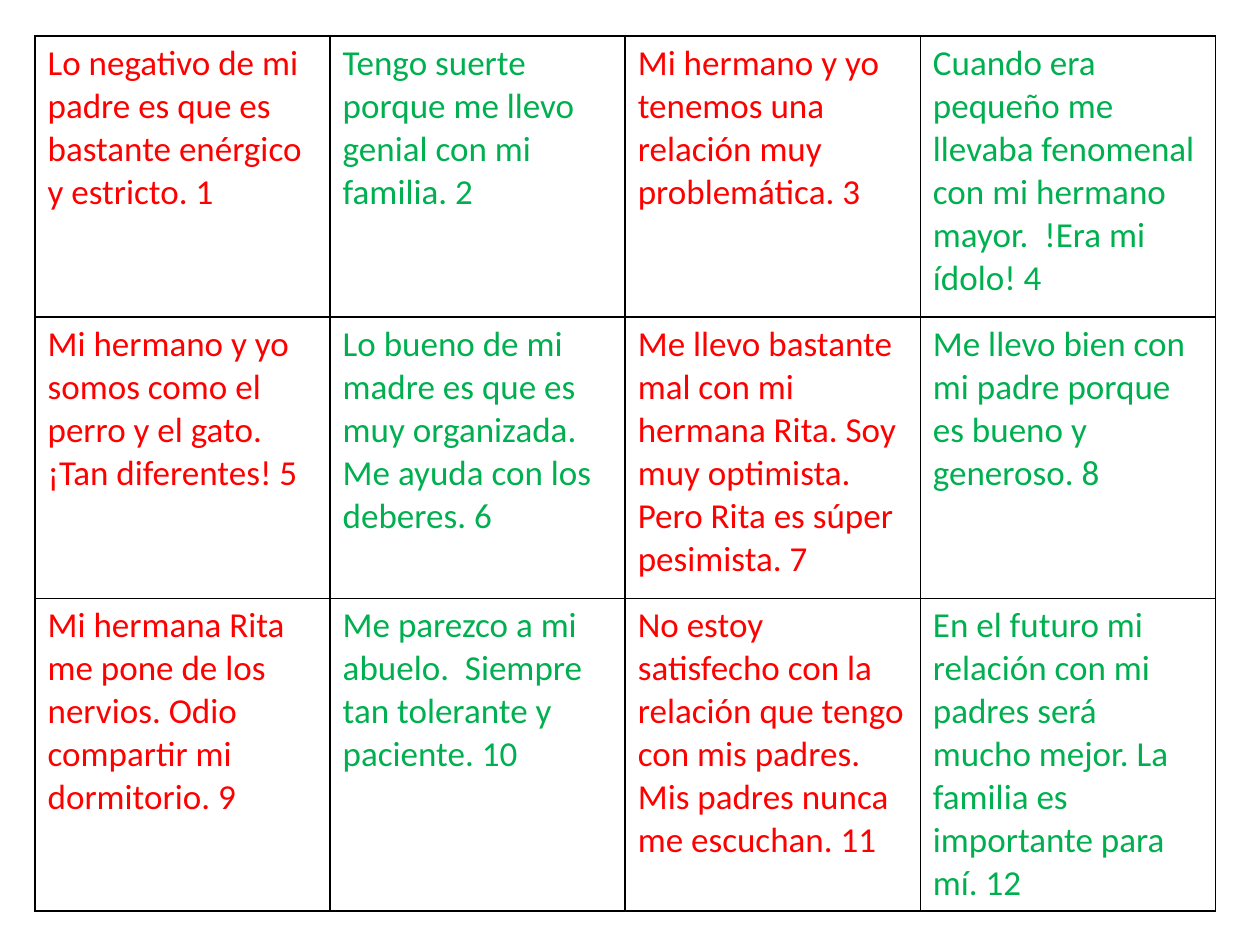
from lxml.etree import SubElement
from pptx import Presentation
from pptx.dml.color import RGBColor
from pptx.oxml.ns import qn
from pptx.util import Pt

# Content: one list per table row; negative and positive cards alternate
CARDS = [
    [
        "Lo negativo de mi padre es que es bastante enérgico y estricto. 1",
        "Tengo suerte porque me llevo genial con mi familia. 2",
        "Mi hermano y yo tenemos una relación muy problemática. 3",
        "Cuando era pequeño me llevaba fenomenal con mi hermano mayor.  !Era mi ídolo! 4",
    ],
    [
        "Mi hermano y yo somos como el perro y el gato. ¡Tan diferentes! 5",
        "Lo bueno de mi madre es que es muy organizada. Me ayuda con los deberes. 6",
        "Me llevo bastante mal con mi hermana Rita. Soy muy optimista. Pero Rita es súper pesimista. 7",
        "Me llevo bien con mi padre porque es bueno y generoso. 8",
    ],
    [
        "Mi hermana Rita me pone de los nervios. Odio compartir mi dormitorio. 9",
        "Me parezco a mi abuelo.  Siempre tan tolerante y paciente. 10",
        "No estoy satisfecho con la relación que tengo con mis padres. Mis padres nunca me escuchan. 11",
        "En el futuro mi relación con mi padres será mucho mejor. La familia es importante para mí. 12",
    ],
]

THEME = {
    "font": {"name": "Calibri", "size": Pt(20), "bold": False},
    "negative": RGBColor(0xFF, 0x00, 0x00),
    "positive": RGBColor(0x00, 0xB0, 0x50),
    "border": "000000",
    "border_width": Pt(1),
}

LEFT, TOP = Pt(20), Pt(20.7)
WIDTH, HEIGHT = Pt(674.6), Pt(511.2)
ROW_HEIGHT = Pt(160.6)


def add_borders(cell):
    properties = cell._tc.get_or_add_tcPr()
    for position, side in enumerate(("a:lnL", "a:lnR", "a:lnT", "a:lnB")):
        line = properties.makeelement(qn(side), {"w": str(THEME["border_width"])})
        fill = SubElement(line, qn("a:solidFill"))
        SubElement(fill, qn("a:srgbClr"), val=THEME["border"])
        properties.insert(position, line)


def fill_card(cell, text, color):
    cell.fill.background()
    add_borders(cell)
    run = cell.text_frame.paragraphs[0].add_run()
    run.text = text
    for name, value in THEME["font"].items():
        setattr(run.font, name, value)
    run.font.color.rgb = color


def main():
    presentation = Presentation()
    presentation.slide_width, presentation.slide_height = Pt(720), Pt(540)
    slide = presentation.slides.add_slide(presentation.slide_layouts[6])

    # Card table
    frame = slide.shapes.add_table(len(CARDS), len(CARDS[0]), LEFT, TOP, WIDTH, HEIGHT)
    table = frame.table
    table.first_row = table.horz_banding = False
    for row in table.rows:
        row.height = ROW_HEIGHT
    frame.height = HEIGHT  # taller than the rows, as the last one grows with its text

    # Cards
    for row_index, texts in enumerate(CARDS):
        for column_index, text in enumerate(texts):
            tone = "positive" if column_index % 2 else "negative"
            fill_card(table.cell(row_index, column_index), text, THEME[tone])

    presentation.save("out.pptx")


if __name__ == "__main__":
    main()
